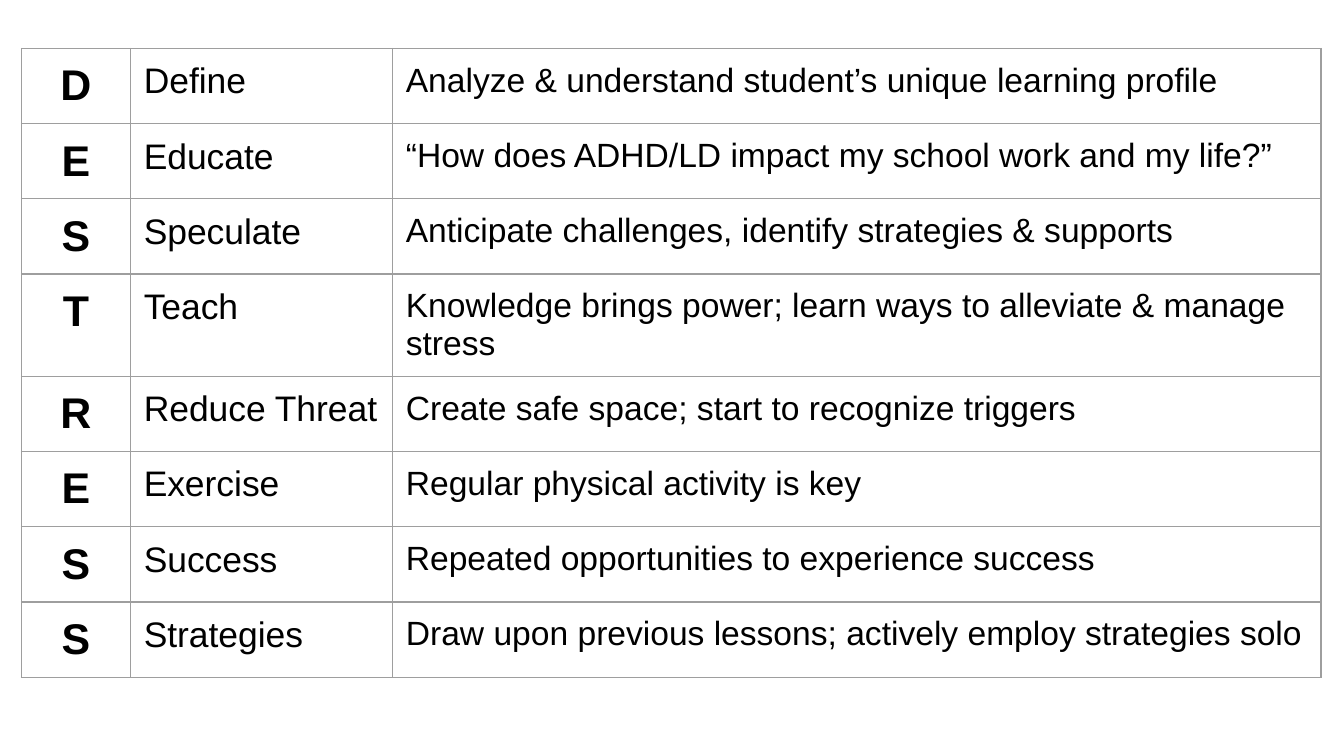
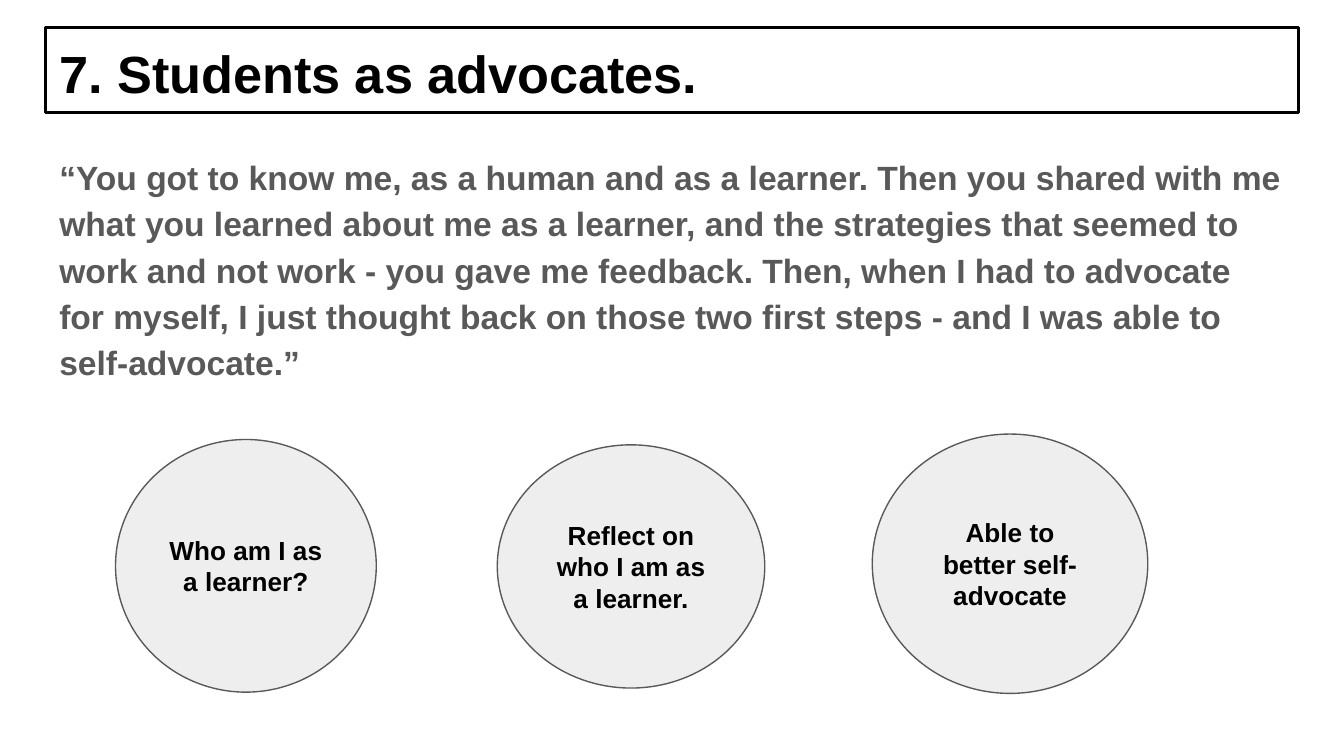
from lxml import etree
from pptx import Presentation, util as u
from pptx.dml.color import RGBColor
from pptx.enum import shapes, text
from pptx.oxml import ns

WIDE = 10
HIGH = WIDE * 9 / 16
FONT = "Arial"
BLACK, GRAY, PALE, RULE = "000000", "595959", "EEEEEE", "9E9E9E"
LEFT, SPAN = 3.41, 93.18

STEPS = [
    ("D", "Define", "Analyze & understand student’s unique learning profile"),
    ("E", "Educate", "“How does ADHD/LD impact my school work and my life?”"),
    ("S", "Speculate", "Anticipate challenges, identify strategies & supports"),
    ("T", "Teach", "Knowledge brings power; learn ways to alleviate & manage stress"),
    ("R", "Reduce Threat", "Create safe space; start to recognize triggers"),
    ("E", "Exercise", "Regular physical activity is key"),
    ("S", "Success", "Repeated opportunities to experience success"),
    ("S", "Strategies", "Draw upon previous lessons; actively employ strategies solo"),
]
COLS = [(0.81, 23, True), (1.95, 19, False), (6.91, 18, False)]
QUOTE = (
    "“You got to know me, as a human and as a learner. Then you shared with me "
    "what you learned about me as a learner, and the strategies that seemed to "
    "work and not work - you gave me feedback. Then, when I had to advocate for "
    "myself, I just thought back on those two first steps - and I was able to "
    "self-advocate.”"
)
STAGES = [
    ("Who am I as a learner?", 0.86, 3.27, 1.94, 1.88),
    ("Reflect on who I am as a learner.", 3.7, 3.31, 1.99, 1.81),
    ("Able to better self-advocate", 6.49, 3.23, 2.05, 1.93),
]


def tint(code):
    return RGBColor.from_string(code)


def write(frame, words, size, color=BLACK, bold=True, center=False):
    para = frame.paragraphs[0]
    para.alignment = text.PP_ALIGN.CENTER if center else text.PP_ALIGN.LEFT
    run = para.add_run()
    run.text = words
    font = run.font
    font.name, font.size, font.bold = FONT, u.Pt(size), bold
    font.color.rgb = tint(color)
    return para


def pad(box, anchor):
    for side in ("left", "right", "top", "bottom"):
        setattr(box, "margin_" + side, u.Inches(0.1))
    box.vertical_anchor = anchor


def edge(shape, color, width):
    shape.line.color.rgb = tint(color)
    shape.line.width = u.Pt(width)


def share(part, whole):
    return u.Inches(part * whole / 100)


def place(shape, y, h):
    shape.left, shape.width = share(LEFT, WIDE), share(SPAN, WIDE)
    shape.top, shape.height = share(y, HIGH), share(h, HIGH)
    frame = shape.text_frame
    frame.word_wrap = True
    frame.auto_size = text.MSO_AUTO_SIZE.NONE
    pad(frame, text.MSO_ANCHOR.TOP)
    return frame


def rule(cell):
    props = cell._tc.get_or_add_tcPr()
    for i, side in enumerate("LRTB"):
        line = etree.Element(ns.qn("a:ln" + side), w=str(u.Pt(0.75)))
        fill = etree.SubElement(line, ns.qn("a:solidFill"))
        etree.SubElement(fill, ns.qn("a:srgbClr"), val=RULE)
        props.insert(i, line)


def grid(slide, rows, x, y, tall):
    wide = sum(col[0] for col in COLS)
    frame = slide.shapes.add_table(
        len(rows), len(COLS), u.Inches(x), u.Inches(y),
        u.Inches(wide), u.Inches(tall * len(rows)))
    table = frame.table
    table.first_row = table.horz_banding = False
    for c, (width, size, bold) in enumerate(COLS):
        table.columns[c].width = u.Inches(width)
        for r, row in enumerate(rows):
            cell = table.cell(r, c)
            pad(cell, text.MSO_ANCHOR.TOP)
            cell.fill.background()
            rule(cell)
            write(cell.text_frame, row[c], size, bold=bold, center=c == 0)


def title(slide, words):
    shape = slide.shapes.title
    frame = place(shape, 3.65, 11.2)
    edge(shape, BLACK, 1.5)
    write(frame, words, 28)


def body(slide, words):
    frame = place(slide.placeholders[1], 18.16, 36.62)
    para = write(frame, words, 18, GRAY)
    para.line_spacing = 1.15
    para.space_before, para.space_after = u.Pt(0), u.Pt(16)
    props = para._p.get_or_add_pPr()
    props.set("marL", "0")
    props.set("indent", "0")
    etree.SubElement(props, ns.qn("a:buNone"))


def disc(slide, words, *place):
    shape = slide.shapes.add_shape(
        shapes.MSO_SHAPE.OVAL, *[u.Inches(n) for n in place])
    shape.shadow.inherit = False
    shape.fill.solid()
    shape.fill.fore_color.rgb = tint(PALE)
    edge(shape, GRAY, 0.75)
    frame = shape.text_frame
    frame.word_wrap = True
    pad(frame, text.MSO_ANCHOR.MIDDLE)
    write(frame, words, 14, center=True)


def main():
    deck = Presentation()
    deck.slide_width, deck.slide_height = u.Inches(WIDE), u.Inches(HIGH)
    steps = deck.slides.add_slide(deck.slide_layouts[6])
    grid(steps, STEPS, 0.16, 0.36, 0.56)
    voice = deck.slides.add_slide(deck.slide_layouts[1])
    title(voice, "7. Students as advocates.")
    body(voice, QUOTE)
    for stage in STAGES:
        disc(voice, *stage)
    deck.save("out.pptx")


if __name__ == "__main__":
    main()
